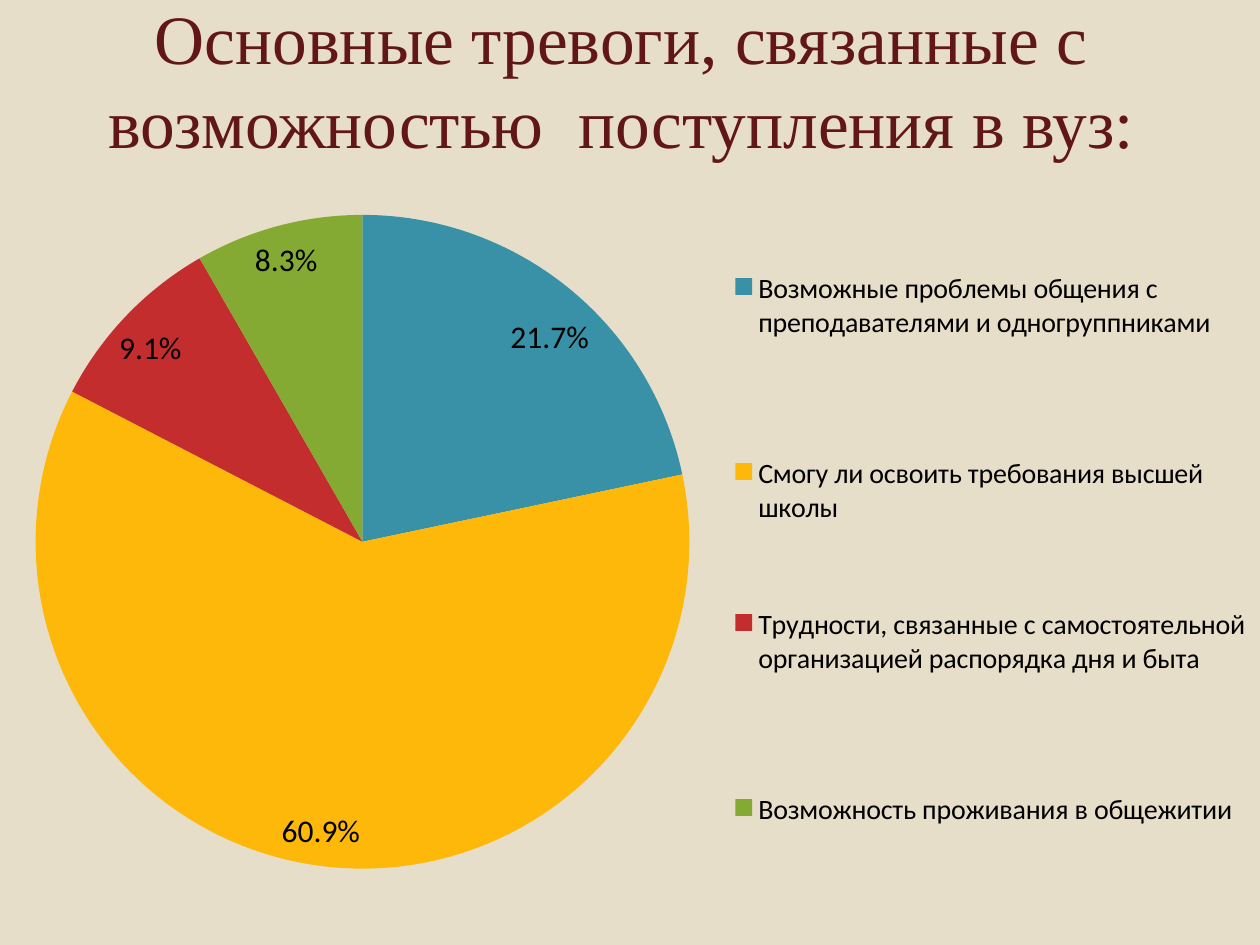
from lxml.etree import SubElement
from pptx import Presentation
from pptx.chart.data import CategoryChartData
from pptx.dml.color import RGBColor
from pptx.enum.chart import XL_CHART_TYPE, XL_LABEL_POSITION, XL_LEGEND_POSITION
from pptx.enum.text import MSO_ANCHOR, PP_ALIGN
from pptx.oxml.ns import qn
from pptx.util import Inches, Pt

BACKGROUND = RGBColor(0xE7, 0xDE, 0xC9)
MAROON = RGBColor(0x62, 0x17, 0x17)
BLACK = RGBColor(0, 0, 0)
TEAL = RGBColor(0x38, 0x91, 0xA7)
AMBER = RGBColor(0xFE, 0xB8, 0x0A)
RED = RGBColor(0xC3, 0x2D, 0x2E)
GREEN = RGBColor(0x84, 0xAA, 0x33)

TITLE = "Основные тревоги, связанные с возможностью  поступления в вуз:"
WORRIES = [
    ("Возможные проблемы общения с преподавателями и одногруппниками\n", 21.7, TEAL),
    ("Смогу ли освоить требования высшей школы", 60.9, AMBER),
    ("Трудности, связанные с самостоятельной организацией распорядка дня и быта\n", 9.1, RED),
    ("Возможность проживания в общежитии\n", 8.3, GREEN),
]
LABEL_SHIFTS = [(0.02, 0.03), (-0.03, -0.01), (-0.01, 0.01), (-0.02, 0.01)]
EDGE_MODES = {"xMode": "edge", "yMode": "edge"}
PLOT_AREA = {"layoutTarget": "inner", **EDGE_MODES, "x": 0.024, "y": 0.072, "w": 0.52, "h": 0.785}
LEGEND_AREA = {**EDGE_MODES, "x": 0.573, "y": 0.042, "w": 0.42, "h": 0.906}
PERCENT_FORMAT = "0.0%"


def set_values(target, values):
    """Set each named attribute of the target."""
    for name, value in values.items():
        setattr(target, name, value)


def format_font(font, name, size, color):
    """Give a font its typeface, size and colour."""
    set_values(font, {"name": name, "size": Pt(size), "bold": False})
    font.color.rgb = color


def place_title(slide):
    """Move, fill and format the title placeholder."""
    title = slide.shapes.title
    set_values(title, {"left": Inches(0.43), "top": 0, "width": Inches(9), "height": Inches(1.25)})
    frame = title.text_frame
    set_values(frame, {"text": TITLE, "word_wrap": True, "vertical_anchor": MSO_ANCHOR.MIDDLE})
    paragraph = frame.paragraphs[0]
    paragraph.alignment = PP_ALIGN.CENTER
    format_font(paragraph.runs[0].font, "Times New Roman", 39.6, MAROON)


def set_layout(parent, position, values):
    """Give a chart part a manual layout as its child at a position."""
    for old_layout in parent.findall(qn("c:layout")):
        parent.remove(old_layout)
    layout = SubElement(parent, qn("c:layout"))
    parent.insert(position, layout)
    manual = SubElement(layout, qn("c:manualLayout"))
    for name, value in values.items():
        SubElement(manual, qn(f"c:{name}")).set("val", str(value))


def format_labels(series):
    """Show percentages and shift each label from its standard place."""
    labels = series.data_labels
    set_values(labels, {
        "show_percentage": True,
        "show_value": False,
        "number_format": PERCENT_FORMAT,
        "number_format_is_linked": False,
        "position": XL_LABEL_POSITION.INSIDE_END,
    })
    format_font(labels.font, "Calibri", 18, BLACK)
    for index in range(len(WORRIES)):
        label = series.points[index].data_label
        label.position = XL_LABEL_POSITION.INSIDE_END
        format_font(label.font, "Calibri", 18, BLACK)
    label_list = series.data_labels
    for element, (across, down) in zip(series._element.iter(qn("c:dLbl")), LABEL_SHIFTS):
        set_layout(element, 1, {"x": across, "y": down})
        number_format = SubElement(element, qn("c:numFmt"))
        number_format.set("formatCode", PERCENT_FORMAT)
        number_format.set("sourceLinked", "0")
        element.insert(2, number_format)
        element.find(qn("c:showVal")).set("val", "0")
        element.find(qn("c:showPercent")).set("val", "1")
    for leader_lines in series._element.iter(qn("c:showLeaderLines")):
        leader_lines.set("val", "0")


def add_pie(slide):
    """Add the pie chart of worries with its labels and legend."""
    data = CategoryChartData()
    data.categories = [worry for worry, share, color in WORRIES]
    data.add_series("Series 1", [share for worry, share, color in WORRIES])
    chart = slide.shapes.add_chart(
        XL_CHART_TYPE.PIE, Inches(0.04), Inches(1.23), Inches(9.99), Inches(6.61), data
    ).chart
    set_values(chart, {"has_title": False, "has_legend": True})
    format_font(chart.font, "Calibri", 18, BLACK)

    plot = chart.plots[0]
    plot.vary_by_categories = True
    series = plot.series[0]
    for index, (worry, share, color) in enumerate(WORRIES):
        fill = series.points[index].format.fill
        fill.solid()
        fill.fore_color.rgb = color
    format_labels(series)

    legend = chart.legend
    set_values(legend, {"position": XL_LEGEND_POSITION.RIGHT, "include_in_layout": False})
    format_font(legend.font, "Calibri", 16, BLACK)
    chart_space = chart.element
    set_layout(chart_space.find(f".//{qn('c:plotArea')}"), 0, PLOT_AREA)
    set_layout(chart_space.find(f".//{qn('c:legend')}"), 1, LEGEND_AREA)


def main():
    """Build and save the slide."""
    presentation = Presentation()
    set_values(presentation, {"slide_width": Inches(10), "slide_height": Inches(7.5)})
    slide = presentation.slides.add_slide(presentation.slide_layouts[5])
    slide.background.fill.solid()
    slide.background.fill.fore_color.rgb = BACKGROUND
    place_title(slide)
    add_pie(slide)
    presentation.save("out.pptx")


if __name__ == "__main__":
    main()
